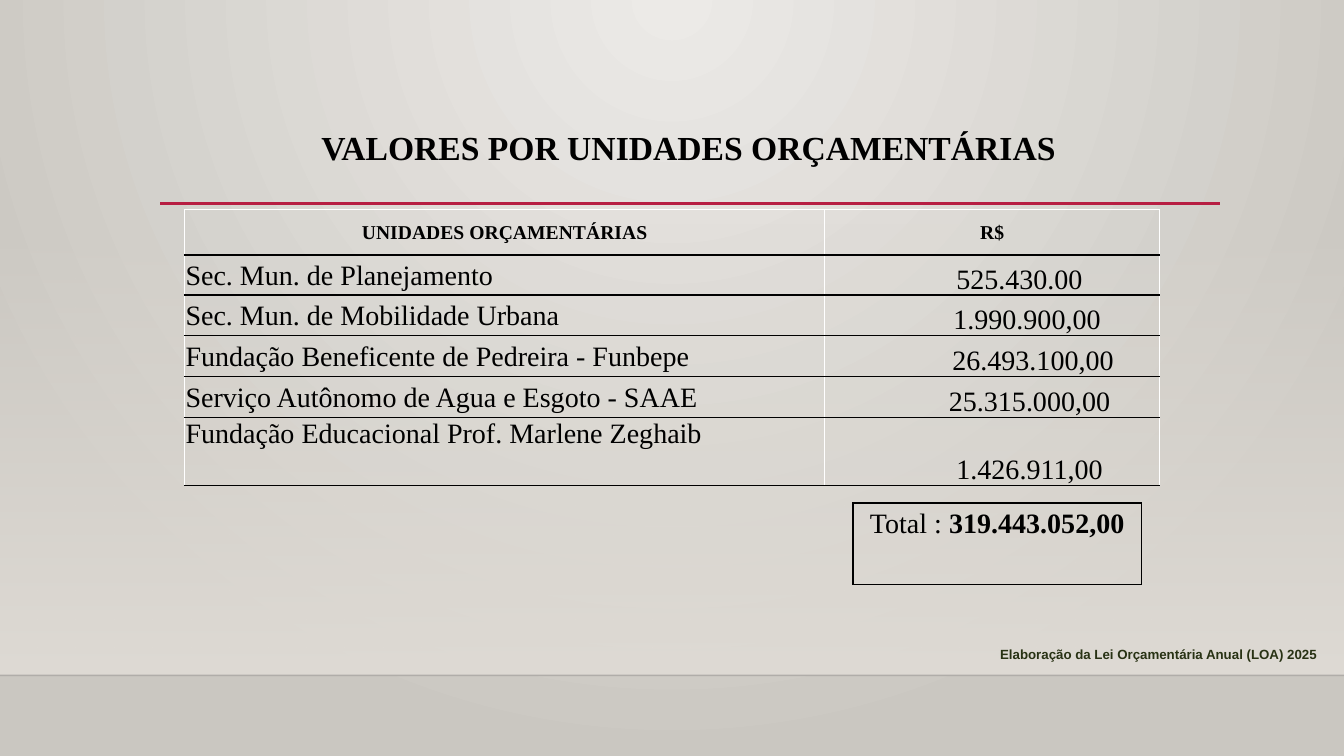
from typing import NamedTuple

import pptx
import pptx.dml.color
import pptx.enum.shapes
import pptx.enum.text
import pptx.oxml
import pptx.oxml.ns
import pptx.util
from lxml import etree

ALIGN = pptx.enum.text.PP_ALIGN
ANCHOR = pptx.enum.text.MSO_ANCHOR
SERIF = "Times New Roman"
BLACK = "000000"
WHITE = "FFFFFF"
NAMESPACE = pptx.oxml.ns.nsdecls("a")
WIDTH = pptx.util.Inches(13.33)
HEIGHT = pptx.util.Inches(7.5)


class Area(NamedTuple):
    """A rectangle in percent of the slide's width and height."""
    left: float
    top: float
    width: float
    height: float


class Style(NamedTuple):
    size: float
    bold: bool = False
    color: str = BLACK
    font: str = SERIF


class Unit(NamedTuple):
    """A budget unit; shift is the inset, in inches, that moves its amount right."""
    name: str
    amount: str
    shift: float
    row_height: float
    anchor: object = ANCHOR.MIDDLE


class Borders(NamedTuple):
    left: str = BLACK
    right: str = BLACK
    top: str = BLACK
    bottom: str = BLACK


TITLE_STYLE = Style(24, True)
FOOTER_STYLE = Style(9.5, True, "283214", "Arial")
HEADER_STYLE = Style(14, True)
BODY_STYLE = Style(20)
BOLD_STYLE = Style(20, True)

COLUMNS = (47.64, 24.91)
HEADER_HEIGHT = 6
UNITS = (
    Unit("Sec. Mun. de Planejamento", "525.430.00", 0.55, 5.3),
    Unit("Sec. Mun. de Mobilidade Urbana", "1.990.900,00", 0.7, 5.4),
    Unit("Fundação Beneficente de Pedreira - Funbepe", "26.493.100,00", 0.82, 5.4),
    Unit("Serviço Autônomo de Agua e Esgoto - SAAE", "25.315.000,00", 0.75, 5.4),
    Unit("Fundação Educacional Prof. Marlene Zeghaib", "1.426.911,00", 0.75, 9, ANCHOR.TOP),
)


def across(percent: float) -> int:
    return round(WIDTH * percent / 100)


def down(percent: float) -> int:
    return round(HEIGHT * percent / 100)


def place(area: Area) -> tuple:
    return across(area.left), down(area.top), across(area.width), down(area.height)


def rgb(color: str):
    return pptx.dml.color.RGBColor.from_string(color)


def set_gradient(fill, host, stops: list, direction: str) -> None:
    """Stops are (position, colour, opacity), the numbers in percent."""
    fill.gradient()
    gradient = host.find(".//" + pptx.oxml.ns.qn("a:gradFill"))
    for child in list(gradient):
        gradient.remove(child)
    marks = "".join(
        f'<a:gs pos="{position * 1000}"><a:srgbClr val="{color}">'
        f'<a:alpha val="{opacity * 1000}"/></a:srgbClr></a:gs>'
        for position, color, opacity in stops)
    gradient.append(pptx.oxml.parse_xml(f"<a:gsLst {NAMESPACE}>{marks}</a:gsLst>"))
    gradient.append(pptx.oxml.parse_xml(direction))


def add_rule(page, left: float, right: float, top: float, color: str,
             weight: float, opacity: int = 100) -> None:
    rule = page.shapes.add_connector(
        pptx.enum.shapes.MSO_CONNECTOR.STRAIGHT,
        across(left), down(top), across(right), down(top))
    rule.line.color.rgb = rgb(color)
    rule.line.width = pptx.util.Pt(weight)
    properties = rule.element.spPr
    if opacity < 100:
        tint = properties.find(".//" + pptx.oxml.ns.qn("a:srgbClr"))
        etree.SubElement(tint, pptx.oxml.ns.qn("a:alpha"), val=str(opacity * 1000))
    etree.SubElement(properties, pptx.oxml.ns.qn("a:effectLst"))


def write(frame, align, *parts: tuple) -> None:
    """Each part is a text with its style."""
    para = frame.paragraphs[0]
    para.alignment = align
    for text, style in parts:
        span = para.add_run()
        span.text = text
        span.font.size = pptx.util.Pt(style.size)
        span.font.bold = style.bold
        span.font.name = style.font
        span.font.color.rgb = rgb(style.color)


def add_text(page, area: Area, text: str, style: Style, align) -> None:
    frame = page.shapes.add_textbox(*place(area)).text_frame
    frame.word_wrap = True
    frame.vertical_anchor = ANCHOR.MIDDLE
    write(frame, align, (text, style))


def add_plain_table(page, left: float, top: float, columns: tuple, rows: tuple):
    area = Area(left, top, sum(columns), sum(rows))
    table = page.shapes.add_table(len(rows), len(columns), *place(area)).table
    table.first_row = False
    table.horz_banding = False
    for column, width in zip(table.columns, columns):
        column.width = across(width)
    for row, height in zip(table.rows, rows):
        row.height = down(height)
    return table


def dress(cell, borders: Borders) -> None:
    """Draws the four borders and leaves the cell without a fill."""
    properties = cell._tc.get_or_add_tcPr()
    for side, color in zip("LRTB", borders):
        properties.append(pptx.oxml.parse_xml(
            f'<a:ln{side} {NAMESPACE} w="12700"><a:solidFill><a:srgbClr val="{color}"/>'
            f'</a:solidFill></a:ln{side}>'))
    cell.fill.background()


def fill_cell(cell, text: str, style: Style, align, anchor, borders: Borders,
              shift: float = 0.01) -> None:
    dress(cell, borders)
    cell.margin_left = pptx.util.Inches(shift)
    cell.margin_right = cell.margin_top = pptx.util.Inches(0.01)
    cell.margin_bottom = 0
    cell.vertical_anchor = anchor
    write(cell.text_frame, align, (text, style))


def add_backdrop(page) -> None:
    set_gradient(page.background.fill, page.element,
                 [(0, "ECEAE7", 100), (100, "CAC7C1", 100)],
                 f'<a:path {NAMESPACE} path="circle">'
                 '<a:fillToRect l="43000" t="0" r="43000" b="100000"/></a:path>')
    wall = page.shapes.add_shape(
        pptx.enum.shapes.MSO_SHAPE.RECTANGLE, *place(Area(0, 29.47, 100, 59.87)))
    wall.shadow.inherit = False
    wall.line.fill.background()
    set_gradient(wall.fill, wall.element.spPr,
                 [(0, "DFDBD5", 0), (100, "DFDBD5", 100)],
                 f'<a:lin {NAMESPACE} ang="5400000" scaled="0"/>')
    add_rule(page, 0, 100, 89.33, "000001", 1, 20)


def add_units_table(page) -> None:
    rows = (HEADER_HEIGHT, *(unit.row_height for unit in UNITS))
    table = add_plain_table(page, 13.73, 27.73, COLUMNS, rows)
    for column, heading in enumerate(("UNIDADES ORÇAMENTÁRIAS", "R$")):
        fill_cell(table.cell(0, column), heading, HEADER_STYLE, ALIGN.CENTER,
                  ANCHOR.MIDDLE, Borders(WHITE, WHITE, WHITE))
    body = Borders(WHITE, WHITE)
    for row, unit in enumerate(UNITS, 1):
        fill_cell(table.cell(row, 0), unit.name, BODY_STYLE, ALIGN.LEFT, unit.anchor, body)
        fill_cell(table.cell(row, 1), unit.amount, BODY_STYLE, ALIGN.CENTER,
                  ANCHOR.BOTTOM, body, unit.shift)


def add_total(page) -> None:
    cell = add_plain_table(page, 63.47, 66.53, (21.46,), (10.8,)).cell(0, 0)
    dress(cell, Borders())
    write(cell.text_frame, ALIGN.CENTER,
          ("Total : ", BODY_STYLE), ("319.443.052,00", BOLD_STYLE))


def main() -> None:
    deck = pptx.Presentation()
    deck.slide_width, deck.slide_height = WIDTH, HEIGHT
    page = deck.slides.add_slide(deck.slide_layouts[6])
    add_backdrop(page)
    add_rule(page, 11.93, 90.77, 26.93, "B71E42", 2.5)
    add_text(page, Area(11.85, 11.73, 78.77, 15.47),
             "VALORES POR UNIDADES ORÇAMENTÁRIAS", TITLE_STYLE, ALIGN.CENTER)
    add_text(page, Area(65.04, 84.8, 33.68, 3.47),
             "Elaboração da Lei Orçamentária Anual (LOA) 2025", FOOTER_STYLE, ALIGN.RIGHT)
    add_units_table(page)
    add_total(page)
    deck.save("out.pptx")


if __name__ == "__main__":
    main()
